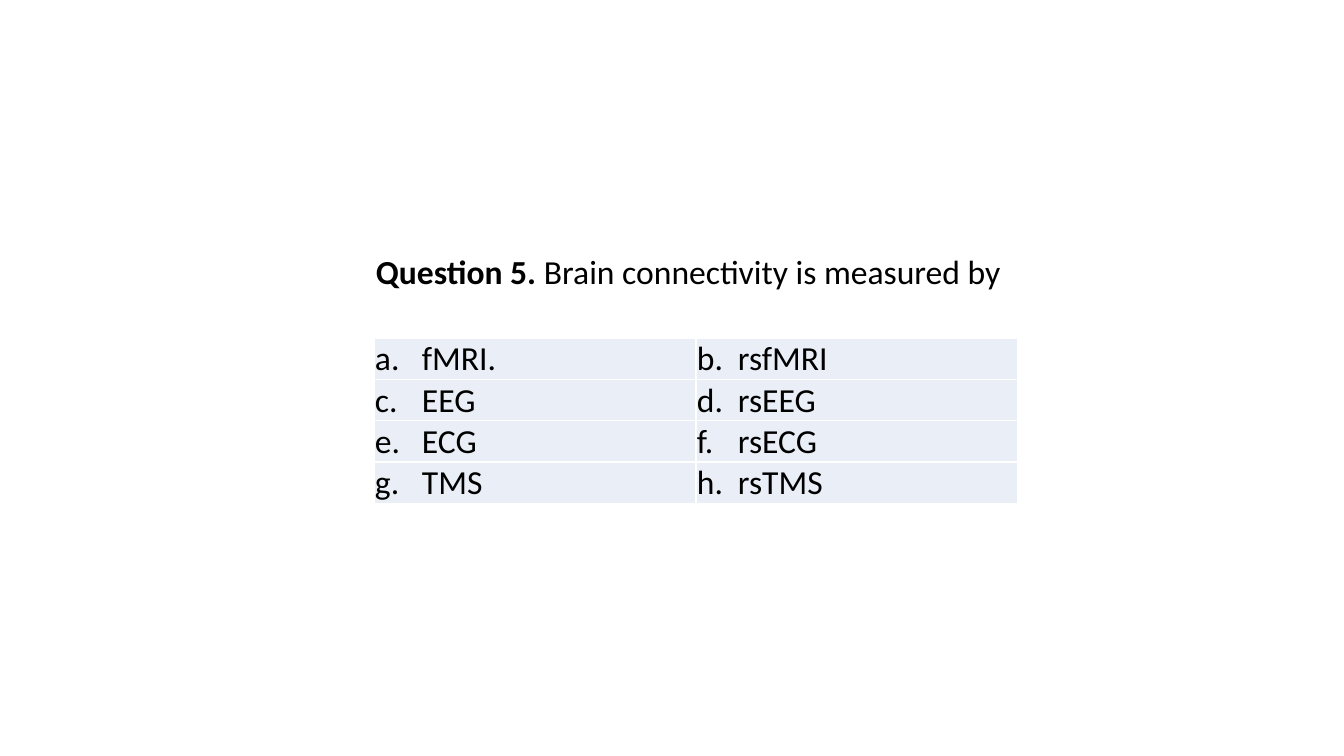
import pptx
import pptx.util
import pptx.dml.color
import pptx.enum.text
import pptx.oxml.ns
import lxml.etree

SCALE = 914400 / 100.8
BLACK = pptx.dml.color.RGBColor(0, 0, 0)
WHITE = pptx.dml.color.RGBColor(255, 255, 255)
PALE = pptx.dml.color.RGBColor(0xEA, 0xEF, 0xF7)
ANCHOR = pptx.enum.text.MSO_ANCHOR
ROWS = [
    ("a.\tfMRI.", "b.\trsfMRI"),
    ("c.\tEEG", "d.\trsEEG"),
    ("e.\tECG", "f.\trsECG"),
    ("g.\tTMS", "h.\trsTMS"),
]
TABS = (47, 41)


def px(n):
    return pptx.util.Emu(round(n * SCALE))


def style(run, bold=False):
    run.font.name = "Calibri"
    run.font.size = pptx.util.Pt(24)
    run.font.bold = bold
    run.font.color.rgb = BLACK


def ask(slide, label, words):
    box = slide.shapes.add_textbox(px(366), px(243), px(651), px(51))
    frame = box.text_frame
    frame.word_wrap = False
    frame.auto_size = pptx.enum.text.MSO_AUTO_SIZE.SHAPE_TO_FIT_TEXT
    para = frame.paragraphs[0]
    para.line_spacing = 1.07
    para.space_after = pptx.util.Pt(6)
    for text, bold in ((label, True), (words, False)):
        run = para.add_run()
        run.text = text
        style(run, bold)


def edge(cell):
    props = cell._tc.get_or_add_tcPr()
    qn = pptx.oxml.ns.qn
    for side in "LRTB":
        line = lxml.etree.SubElement(props, qn("a:ln" + side), w="12700")
        fill = lxml.etree.SubElement(line, qn("a:solidFill"))
        lxml.etree.SubElement(fill, qn("a:srgbClr"), val=str(WHITE))


def fill_cell(cell, text, tab, anchor):
    edge(cell)
    cell.fill.solid()
    cell.fill.fore_color.rgb = PALE
    cell.margin_left = cell.margin_right = cell.margin_top = px(1)
    cell.margin_bottom = 0
    cell.vertical_anchor = anchor
    cell.text_frame.text = text
    para = cell.text_frame.paragraphs[0]
    props = para._p.get_or_add_pPr()
    props.set("marL", str(px(tab)))
    props.set("indent", str(-px(tab)))
    style(para.runs[0])


def grid(slide):
    count = len(ROWS)
    shape = slide.shapes.add_table(
        count, len(TABS), px(374), px(338), px(644), px(41 * count)
    )
    table = shape.table
    table.first_row = False
    table.horz_banding = False
    for r, row in enumerate(ROWS):
        anchor = ANCHOR.BOTTOM if r == count - 1 else ANCHOR.MIDDLE
        for c, text in enumerate(row):
            fill_cell(table.cell(r, c), text, TABS[c], anchor)


def main():
    deck = pptx.Presentation()
    deck.slide_width = px(1344)
    deck.slide_height = px(756)
    slide = deck.slides.add_slide(deck.slide_layouts[6])
    ask(slide, "Question 5.", " Brain connectivity is measured by")
    grid(slide)
    deck.save("out.pptx")


if __name__ == "__main__":
    main()
